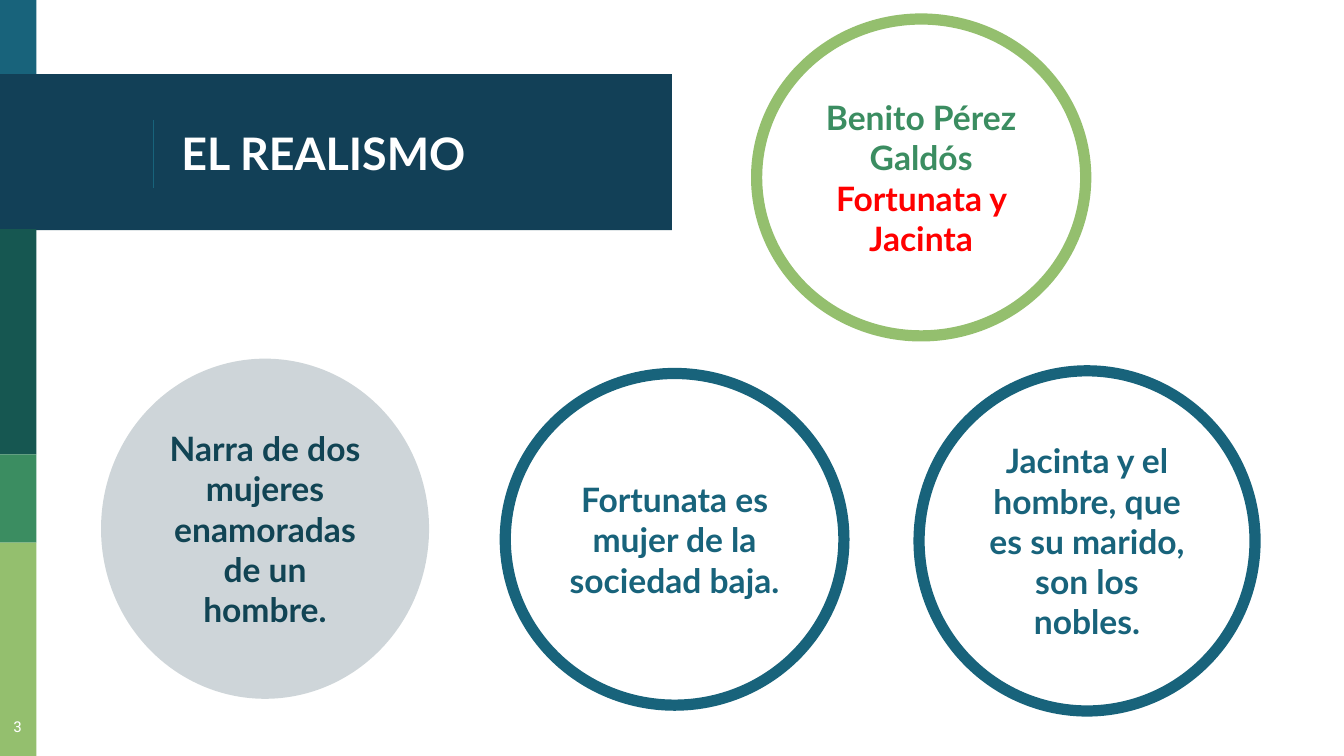
from lxml import etree
from pptx import Presentation, util as u
from pptx.dml.color import RGBColor
from pptx.enum import shapes, text
from pptx.oxml import ns

NAVY, TEAL, PINE = "124057", "18637B", "165751"
GREEN, LIME, INK = "3B8D61", "94BF6E", "114454"
WHITE, RED, SHADE = "FFFFFF", "FF0000", "0E3142"


def colour(code):
    return RGBColor.from_string(code)


class Page:
    font = "Lato"
    inset = u.Cm(0.25)

    def __init__(self, slide):
        self.items = slide.shapes

    def fill_text(self, box, paras, size, bold=True, font=None, centred=True, middle=True):
        """Fill a box with one paragraph per (words, colour) pair."""
        frame = box.text_frame
        frame.word_wrap = True
        frame.margin_left = frame.margin_right = self.inset
        frame.margin_top = frame.margin_bottom = self.inset
        frame.vertical_anchor = text.MSO_ANCHOR.MIDDLE if middle else text.MSO_ANCHOR.TOP
        for index, (words, code) in enumerate(paras):
            para = frame.add_paragraph() if index else frame.paragraphs[0]
            para.alignment = text.PP_ALIGN.CENTER if centred else text.PP_ALIGN.LEFT
            span = para.add_run()
            span.text = words
            span.font.name = font or self.font
            span.font.size = u.Pt(size)
            span.font.bold = bold
            span.font.color.rgb = colour(code)

    def shape(self, kind, place, fill=None, line=None, alpha=None):
        box = self.items.add_shape(kind, *map(u.Cm, place))
        box.shadow.inherit = False
        if fill:
            box.fill.solid()
            box.fill.fore_color.rgb = colour(fill)
        else:
            box.fill.background()
        if alpha:
            tint = box._element.spPr.find(".//" + ns.qn("a:srgbClr"))
            etree.SubElement(tint, ns.qn("a:alpha"), val=str(alpha * 1000))
        if line:
            box.line.color.rgb = colour(line)
            box.line.width = u.Pt(6)
        else:
            box.line.fill.background()
        return box

    def band(self, place, fill):
        self.shape(shapes.MSO_SHAPE.RECTANGLE, place, fill)

    def circle(self, place, paras, **style):
        self.fill_text(self.shape(shapes.MSO_SHAPE.OVAL, place, **style), paras, 18)

    def rule(self, x, top, bottom, code):
        line = self.items.add_connector(
            shapes.MSO_CONNECTOR.STRAIGHT, u.Cm(x), u.Cm(top), u.Cm(x), u.Cm(bottom))
        line.line.color.rgb = colour(code)
        line.line.width = u.Pt(0.75)
        etree.SubElement(line._element.spPr, ns.qn("a:effectLst"))

    def label(self, place, words, code, size, **style):
        box = self.items.add_textbox(*map(u.Cm, place))
        self.fill_text(box, [(words, code)], size, **style)


def main():
    deck = Presentation()
    deck.slide_width, deck.slide_height = u.Cm(25.4), u.Cm(14.29)
    page = Page(deck.slides.add_slide(deck.slide_layouts[6]))

    # Side strip and title band
    strip = 0.69
    page.band((0, 0, strip, 1.47), TEAL)
    page.band((0, 1.4, 12.7, 2.95), NAVY)
    for top, height, code in [(4.33, 4.26, PINE), (8.59, 1.67, GREEN), (10.26, 4.03, LIME)]:
        page.band((0, top, strip, height), code)

    # Title
    page.rule(2.9, 2.26, 3.56, TEAL)
    page.label((3.18, 1.47, 8.92, 2.84), "EL REALISMO", WHITE, 24, centred=False)

    # Author and novel
    page.circle((14.3, 0.36, 6.22, 5.99),
                [("Benito Pérez Galdós", GREEN), ("Fortunata y Jacinta", RED)], line=LIME)

    # Plot and characters
    page.circle((1.91, 6.78, 6.2, 6.43),
                [("Narra de dos mujeres enamoradas de un hombre.", INK)], fill=SHADE, alpha=20)
    page.circle((9.55, 7.06, 6.4, 6.27),
                [("Fortunata es mujer de la sociedad baja.", TEAL)], line=TEAL)
    page.circle((17.37, 7.01, 6.35, 6.43),
                [("Jacinta y el hombre, que es su marido, son los nobles.", TEAL)], line=TEAL)

    # Page number
    page.label((-0.15, 13.39, 0.97, 0.89), "3", WHITE, 8,
               bold=False, font="Roboto Slab", middle=False)

    deck.save("out.pptx")


if __name__ == "__main__":
    main()
